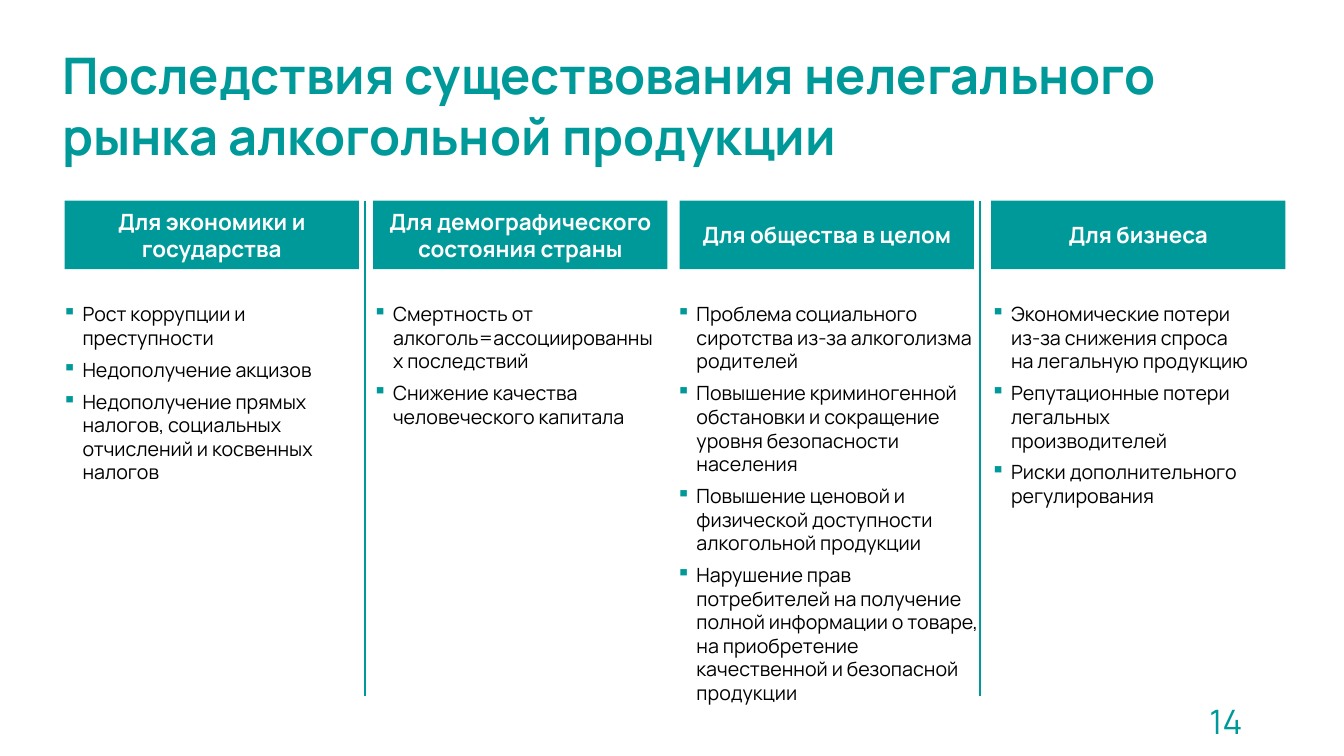
from lxml import etree
from pptx import Presentation
from pptx import util as u
from pptx.dml.color import RGBColor
from pptx.enum import shapes, text
from pptx.oxml.ns import qn

TEAL = RGBColor(0x00, 0x99, 0x99)
WHITE = RGBColor(0xFF, 0xFF, 0xFF)
BLACK = RGBColor(0x00, 0x00, 0x00)

HEADER_TOP = 1.99
LIST_TOP = 2.95

# Header left, list left, list width, list height, heading, consequences
COLUMNS = [
    (0.64, 0.52, 3.19, 1.92, "Для экономики и государства", [
        "Рост коррупции и преступности",
        "Недополучение акцизов",
        "Недополучение прямых налогов, социальных отчислений и косвенных налогов",
    ]),
    (3.7, 3.6, 3.07, 1.36, "Для демографического состояния страны", [
        "Смертность от алкоголь=ассоциированных последствий",
        "Снижение качества человеческого капитала",
    ]),
    (6.74, 6.61, 3.2, 4.12, "Для общества в целом", [
        "Проблема социального сиротства из-за алкоголизма родителей",
        "Повышение криминогенной обстановки и сокращение уровня безопасности населения",
        "Повышение ценовой и физической доступности алкогольной продукции",
        "Нарушение прав потребителей на получение полной информации о товаре, "
        "на приобретение качественной и безопасной продукции",
    ]),
    (9.83, 9.73, 2.77, 2.15, "Для бизнеса", [
        "Экономические потери из-за снижения спроса на легальную продукцию",
        "Репутационные потери легальных производителей",
        "Риски дополнительного регулирования",
    ]),
]


class SlideBuilder:
    font_name = "Manrope"

    def __init__(self, slide):
        self.slide = slide

    def style(self, paragraph, size, color, bold=False):
        for run in paragraph.runs:
            run.font.name = self.font_name
            run.font.size = u.Pt(size)
            run.font.bold = bold
            run.font.color.rgb = color

    def text_box(self, left, top, width, height, content, size, color,
                 bold=False, align=text.PP_ALIGN.LEFT, anchor=text.MSO_ANCHOR.TOP):
        box = self.slide.shapes.add_textbox(*map(u.Inches, (left, top, width, height)))
        frame = box.text_frame
        frame.word_wrap = True
        frame.vertical_anchor = anchor
        frame.text = content
        for paragraph in frame.paragraphs:
            paragraph.alignment = align
            self.style(paragraph, size, color, bold)
        return frame

    def header(self, left, top, width, height, content):
        shape = self.slide.shapes.add_shape(
            shapes.MSO_SHAPE.RECTANGLE, *map(u.Inches, (left, top, width, height)))
        shape.shadow.inherit = False
        shape.fill.solid()
        shape.fill.fore_color.rgb = TEAL
        shape.line.fill.background()
        frame = shape.text_frame
        frame.word_wrap = True
        frame.vertical_anchor = text.MSO_ANCHOR.MIDDLE
        frame.text = content
        frame.paragraphs[0].alignment = text.PP_ALIGN.CENTER
        self.style(frame.paragraphs[0], 16, WHITE, bold=True)

    def bullet_list(self, left, top, width, height, items):
        frame = self.text_box(left, top, width, height, "\n".join(items), 14, BLACK)
        for index, paragraph in enumerate(frame.paragraphs):
            if index:
                paragraph.space_before = u.Pt(6)
            properties = paragraph._p.get_or_add_pPr()
            properties.set("marL", str(u.Inches(0.2)))
            properties.set("indent", str(-u.Inches(0.2)))
            bullet_color = etree.SubElement(properties, qn("a:buClr"))
            etree.SubElement(bullet_color, qn("a:srgbClr"), val=str(TEAL))
            etree.SubElement(properties, qn("a:buChar"), char="▪")

    def divider(self, left, top, bottom):
        line = self.slide.shapes.add_connector(
            shapes.MSO_CONNECTOR.STRAIGHT, *map(u.Inches, (left, top, left, bottom)))
        line.line.color.rgb = TEAL
        line.line.width = u.Pt(1.5)
        etree.SubElement(line._element.spPr, qn("a:effectLst"))


def main():
    presentation = Presentation()
    presentation.slide_width = u.Inches(13.33)
    presentation.slide_height = u.Inches(7.5)
    builder = SlideBuilder(presentation.slides.add_slide(presentation.slide_layouts[6]))

    # Title
    builder.text_box(0.52, 0.39, 11.27, 1.31,
                     "Последствия существования нелегального рынка алкогольной продукции",
                     36, TEAL, bold=True)

    # Columns of consequences
    for header_left, list_left, width, height, heading, items in COLUMNS:
        builder.header(header_left, HEADER_TOP, 2.92, 0.68, heading)
        builder.bullet_list(list_left, LIST_TOP, width, height, items)

    # Dividers
    for left in (3.62, 9.72):
        builder.divider(left, HEADER_TOP, 6.9)

    # Page number
    builder.text_box(9.42, 6.95, 3, 0.4, "14", 24, TEAL,
                     align=text.PP_ALIGN.RIGHT, anchor=text.MSO_ANCHOR.MIDDLE)

    presentation.save("out.pptx")


if __name__ == "__main__":
    main()
